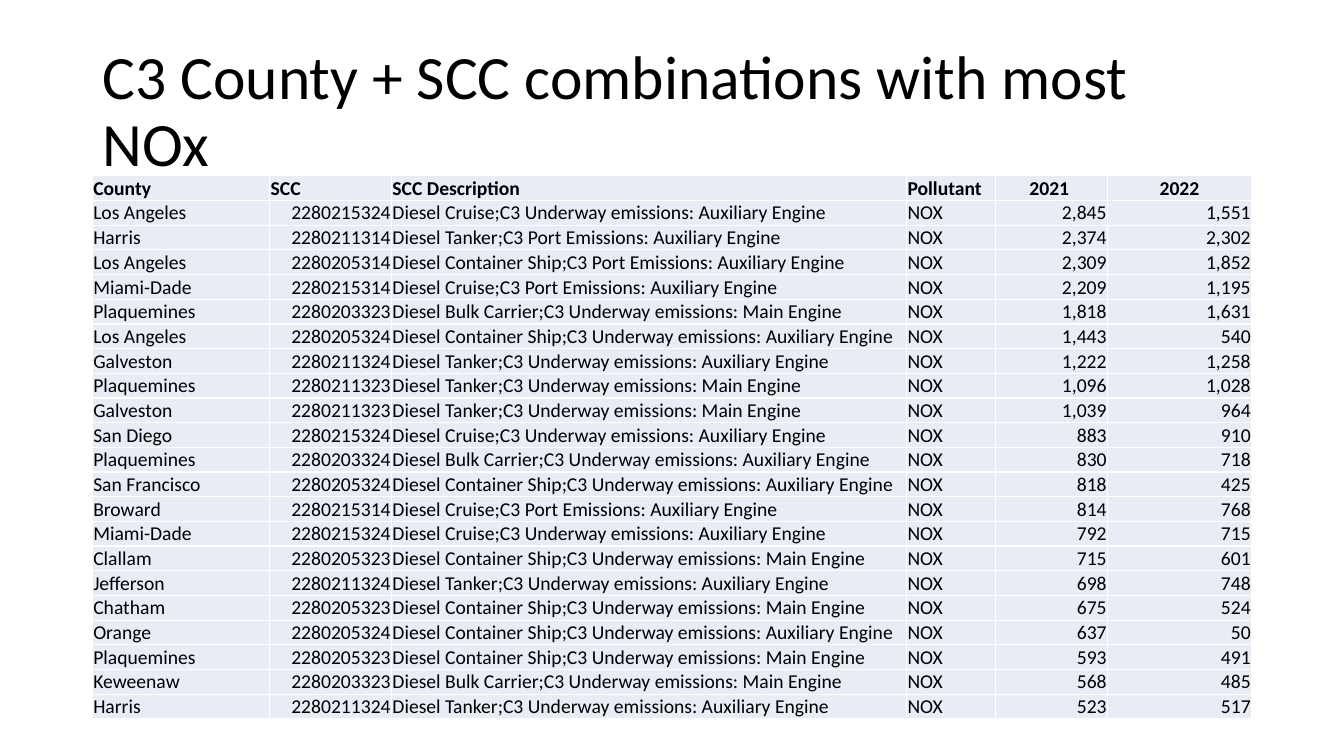
from dataclasses import dataclass

from lxml.etree import SubElement
from pptx import Presentation
from pptx.dml.color import RGBColor
from pptx.enum.text import MSO_ANCHOR, MSO_AUTO_SIZE, PP_ALIGN
from pptx.oxml.ns import qn
from pptx.util import Cm, Pt


@dataclass(frozen=True)
class Theme:
    font: str = "Calibri"
    title_size: int = 44
    table_size: int = 14
    text: str = "000000"
    cell: str = "E9EBF5"
    border: str = "FFFFFF"


theme = Theme()

HEADERS = ["County", "SCC", "SCC Description", "Pollutant", "2021 ", "2022"]
COLUMN_WIDTHS = [4.47, 3.07, 12.98, 2.24, 2.82, 3.63]
LEFT, CENTER, RIGHT = PP_ALIGN.LEFT, PP_ALIGN.CENTER, PP_ALIGN.RIGHT
HEADER_ALIGNS = [LEFT, LEFT, LEFT, LEFT, CENTER, CENTER]
BODY_ALIGNS = [LEFT, RIGHT, LEFT, LEFT, RIGHT, RIGHT]

EMISSIONS = [
    ("Los Angeles", "2280215324", "2,845", "1,551"),
    ("Harris", "2280211314", "2,374", "2,302"),
    ("Los Angeles", "2280205314", "2,309", "1,852"),
    ("Miami-Dade", "2280215314", "2,209", "1,195"),
    ("Plaquemines", "2280203323", "1,818", "1,631"),
    ("Los Angeles", "2280205324", "1,443", "540"),
    ("Galveston", "2280211324", "1,222", "1,258"),
    ("Plaquemines", "2280211323", "1,096", "1,028"),
    ("Galveston", "2280211323", "1,039", "964"),
    ("San Diego", "2280215324", "883", "910"),
    ("Plaquemines", "2280203324", "830", "718"),
    ("San Francisco", "2280205324", "818", "425"),
    ("Broward", "2280215314", "814", "768"),
    ("Miami-Dade", "2280215324", "792", "715"),
    ("Clallam", "2280205323", "715", "601"),
    ("Jefferson", "2280211324", "698", "748"),
    ("Chatham", "2280205323", "675", "524"),
    ("Orange", "2280205324", "637", "50"),
    ("Plaquemines", "2280205323", "593", "491"),
    ("Keweenaw", "2280203323", "568", "485"),
    ("Harris", "2280211324", "523", "517"),
]

SHIPS = {"03": "Bulk Carrier", "05": "Container Ship", "11": "Tanker", "15": "Cruise"}
MODES = {"1": "Port Emissions", "2": "Underway emissions"}
ENGINES = {"3": "Main", "4": "Auxiliary"}


def describe_scc(scc):
    """Spell out the ship, mode and engine digits of a source code."""
    ship, mode, engine = SHIPS[scc[5:7]], MODES[scc[8]], ENGINES[scc[9]]
    return f"Diesel {ship};C3 {mode}: {engine} Engine"


def add_text(p, text, size, bold=False):
    r = p.add_run()
    r.text = text
    r.font.name = theme.font
    r.font.size = Pt(size)
    r.font.bold = bold
    r.font.color.rgb = RGBColor.from_string(theme.text)


prs = Presentation()
prs.slide_width, prs.slide_height = Cm(33.87), Cm(19.05)
s = prs.slides.add_slide(prs.slide_layouts[5])

# Title
title = s.shapes.title
title.left, title.top, title.width, title.height = Cm(2.33), Cm(1.01), Cm(29.21), Cm(3.68)
tf = title.text_frame
tf.word_wrap = True
tf.auto_size = MSO_AUTO_SIZE.NONE
tf.vertical_anchor = MSO_ANCHOR.MIDDLE
p = tf.paragraphs[0]
p.alignment = LEFT
p.line_spacing = 0.9
add_text(p, "C3 County + SCC combinations with most NOx", theme.title_size)

# Emissions table
rows = [HEADERS] + [
    [county, scc, describe_scc(scc), "NOX", nox_2021, nox_2022]
    for county, scc, nox_2021, nox_2022 in EMISSIONS
]
frame = s.shapes.add_table(
    len(rows), len(HEADERS), Cm(2.33), Cm(4.43), Cm(29.21), Cm(13.36)
)
table = frame.table
table.horz_banding = False
for column, width in zip(table.columns, COLUMN_WIDTHS):
    column.width = Cm(width)
for row in table.rows:
    row.height = Cm(0.56)
frame.height = Cm(13.36)

for i, values in enumerate(rows):
    is_header = i == 0
    aligns = HEADER_ALIGNS if is_header else BODY_ALIGNS
    for j, (value, align) in enumerate(zip(values, aligns)):
        cell = table.cell(i, j)
        cell.margin_left = cell.margin_right = cell.margin_top = Cm(0.02)
        cell.margin_bottom = 0
        cell.vertical_anchor = MSO_ANCHOR.BOTTOM
        p = cell.text_frame.paragraphs[0]
        p.alignment = align
        add_text(p, value, theme.table_size, bold=is_header)
        tcPr = cell._tc.get_or_add_tcPr()
        for side in ("a:lnL", "a:lnR", "a:lnT", "a:lnB"):
            ln = SubElement(tcPr, qn(side), w=str(Pt(1)))
            fill = SubElement(ln, qn("a:solidFill"))
            SubElement(fill, qn("a:srgbClr"), val=theme.border)
        cell.fill.solid()
        cell.fill.fore_color.rgb = RGBColor.from_string(theme.cell)

prs.save("out.pptx")
